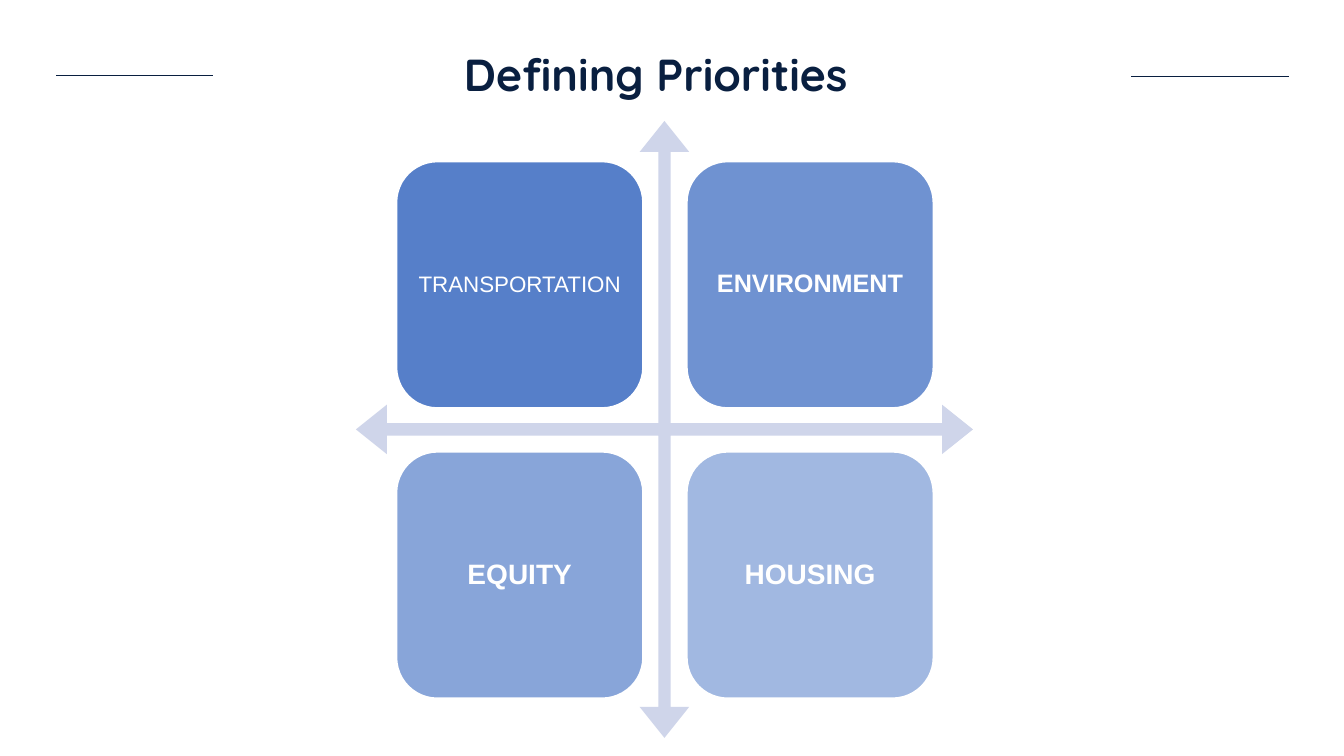
from lxml import etree
from pptx import Presentation
from pptx.dml.color import RGBColor
from pptx.enum.shapes import MSO_CONNECTOR, MSO_SHAPE
from pptx.enum.text import MSO_ANCHOR, PP_ALIGN
from pptx.oxml.ns import qn
from pptx.util import Pt

# Content: label, size, bold, opacity in percent
TITLE = "Defining Priorities"
TILES = [
    ("TRANSPORTATION", 16, False, 90),
    ("ENVIRONMENT", 18, True, 77),
    ("EQUITY", 20, True, 63),
    ("HOUSING", 20, True, 50),
]
RULES = [(56, 211, 75), (1122, 1278, 76)]  # left, right, y
NAVY, BLUE, PALE, WHITE = "091F40", "4472C4", "CFD5EA", "FFFFFF"

# Layout in px, 100 to the inch
SCALE = 9144
LEFT, TOP, SIDE = 353, 120, 612
INSET, TILE, STEP = 40, 245, 288


def px(*nums):
    return [n * SCALE for n in nums]


def color(code):
    return RGBColor.from_string(code)


def write(frame, text, font, size, bold, code):
    frame.word_wrap = True
    para = frame.paragraphs[0]
    para.alignment = PP_ALIGN.CENTER
    run = para.add_run()
    run.text = text
    run.font.name = font
    run.font.size = Pt(size)
    run.font.bold = bold
    run.font.color.rgb = color(code)
    return para


def shape(kind, box, code):
    item = slide.shapes.add_shape(kind, *px(*box))
    item.shadow.inherit = False
    item.fill.solid()
    item.fill.fore_color.rgb = color(code)
    return item


deck = Presentation()
deck.slide_width, deck.slide_height = px(1333, 750)
slide = deck.slides.add_slide(deck.slide_layouts[6])

# Crossed arrows
cross = shape(MSO_SHAPE.QUAD_ARROW, (LEFT, TOP, SIDE, SIDE), PALE)
cross.line.fill.background()
for i, part in enumerate((0.02, 0.04, 0.05)):
    cross.adjustments[i] = part

# Two by two tiles
for i, (label, size, bold, alpha) in enumerate(TILES):
    row, col = divmod(i, 2)
    box = (LEFT + INSET + col * STEP, TOP + INSET + row * STEP, TILE, TILE)
    tile = shape(MSO_SHAPE.ROUNDED_RECTANGLE, box, BLUE)
    tone = tile.fill._xPr.find(qn("a:solidFill"))[0]
    etree.SubElement(tone, qn("a:alpha"), val=str(alpha * 1000))
    tile.line.color.rgb = color(WHITE)
    tile.line.width = Pt(1.5)
    frame = tile.text_frame
    frame.vertical_anchor = MSO_ANCHOR.MIDDLE
    for edge in ("left", "right", "top", "bottom"):
        setattr(frame, "margin_" + edge, 7 * SCALE)
    para = write(frame, label, "Arial", size, bold, WHITE)
    para.line_spacing = 0.9

# Title
head = slide.shapes.add_textbox(*px(156, 41, 989, 64))
write(head.text_frame, TITLE, "Quicksand", 32, True, NAVY)

# Rules beside the title
for left, right, y in RULES:
    rule = slide.shapes.add_connector(MSO_CONNECTOR.STRAIGHT, *px(left, y, right, y))
    rule.line.color.rgb = color(NAVY)
    rule.line.width = Pt(1)
    etree.SubElement(rule._element.spPr, qn("a:effectLst"))

deck.save("out.pptx")
